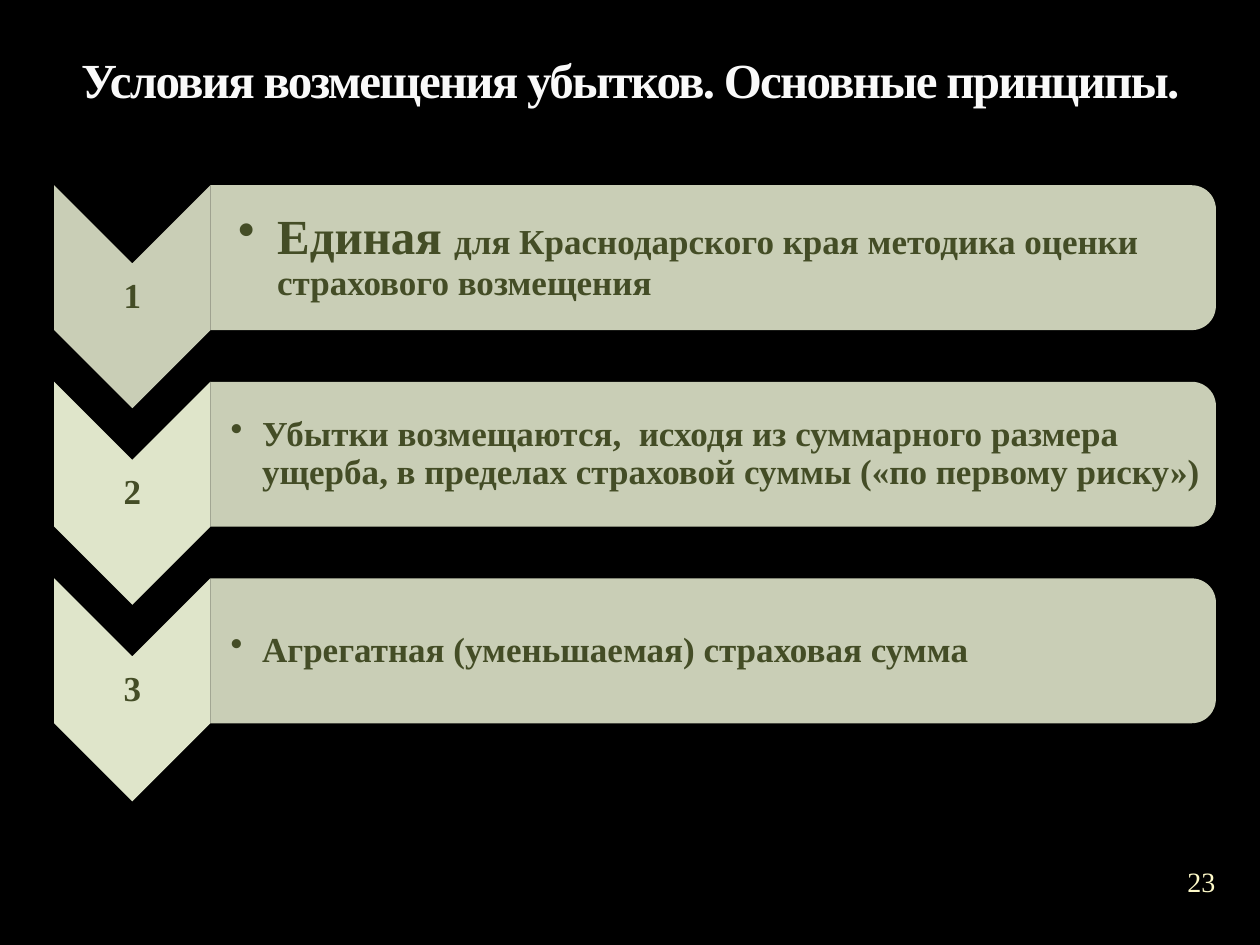
"""Build the slide listing the principles of loss compensation."""
from dataclasses import dataclass
from typing import Optional

from lxml.etree import SubElement
from pptx import Presentation
from pptx.dml.color import RGBColor
from pptx.enum.shapes import MSO_SHAPE as Shape
from pptx.enum.text import MSO_ANCHOR as Anchor, MSO_AUTO_SIZE as AutoSize, PP_ALIGN as Align
from pptx.oxml.ns import qn
from pptx.util import Inches, Pt

WIDTH, HEIGHT = 10, 7.5
FONT = "Times New Roman"
PALE, DARK = "DFE5CA", "444D26"
ROW_TOP, ROW_PITCH = 1.47, 1.56
CHEVRON_LEFT, CHEVRON_WIDTH, CHEVRON_HEIGHT = 0.43, 1.24, 1.77
PANEL_LEFT = CHEVRON_LEFT + CHEVRON_WIDTH
PANEL_WIDTH, PANEL_HEIGHT = 7.98, 1.15
TEXT_WIDTH, TEXT_HEIGHT, NUMBER_HEIGHT = 7.92, 1.04, 0.53


@dataclass(frozen=True)
class Box:
    left: float
    top: float
    width: float
    height: float


@dataclass(frozen=True)
class Phrase:
    text: str
    size: float = 20
    color: str = DARK
    bold: bool = True


@dataclass(frozen=True)
class Principle:
    phrases: tuple[Phrase, ...]
    inset: float = 0.16
    indent: float = 0.25
    chevron_opacity: Optional[int] = None


PRINCIPLES = (
    Principle(
        (Phrase("Единая ", 28),
         Phrase("для Краснодарского края методика оценки страхового возмещения")),
        inset=0.22, indent=0.31, chevron_opacity=90),
    Principle((Phrase("Убытки возмещаются,  исходя из суммарного размера ущерба, "
                      "в пределах страховой суммы («по первому риску»)"),)),
    Principle((Phrase("Агрегатная (уменьшаемая) страховая сумма"),)),
)


def rgb(color: str) -> RGBColor:
    """Turn a hex string into a colour."""
    return RGBColor.from_string(color)


def format_run(run, phrase: Phrase) -> None:
    """Apply the look of a phrase to a run."""
    font = run.font
    font.name, font.size, font.bold = FONT, Pt(phrase.size), phrase.bold
    font.color.rgb = rgb(phrase.color)


def add_text(slide, box: Box, phrases: tuple[Phrase, ...], inset: float = 0.01,
             left_inset: Optional[float] = None, align=Align.CENTER):
    """Add a vertically centred text box and return its paragraph."""
    shape = slide.shapes.add_textbox(*map(Inches, (box.left, box.top, box.width, box.height)))
    frame = shape.text_frame
    frame.word_wrap, frame.vertical_anchor = True, Anchor.MIDDLE
    frame.margin_top = frame.margin_right = frame.margin_bottom = Inches(inset)
    frame.margin_left = Inches(inset if left_inset is None else left_inset)
    paragraph = frame.paragraphs[0]
    paragraph.alignment, paragraph.line_spacing = align, 0.9
    for phrase in phrases:
        run = paragraph.add_run()
        run.text = phrase.text
        format_run(run, phrase)
    return paragraph


def add_bullet(paragraph, indent: float) -> None:
    """Give a paragraph a hanging bullet."""
    properties = paragraph._p.get_or_add_pPr()
    properties.set("marL", str(Inches(indent)))
    properties.set("indent", str(-Inches(indent)))
    SubElement(properties, qn("a:buChar"), char="•")


def add_turned_shape(slide, kind, box: Box, opacity: Optional[int] = None) -> None:
    """Add a shape turned a quarter clockwise so that it covers the box."""
    left = box.left + (box.width - box.height) / 2
    top = box.top + (box.height - box.width) / 2
    shape = slide.shapes.add_shape(kind, *map(Inches, (left, top, box.height, box.width)))
    shape.rotation = 90
    shape.shadow.inherit = False
    shape.line.fill.background()
    shape.fill.solid()
    shape.fill.fore_color.rgb = rgb(PALE)
    if opacity is not None:
        color = shape._element.spPr.find(qn("a:solidFill")).find(qn("a:srgbClr"))
        SubElement(color, qn("a:alpha"), val=str(opacity * 1000))


def add_principle(slide, row: int, principle: Principle) -> None:
    """Draw the numbered chevron and the panel of one row."""
    top = ROW_TOP + row * ROW_PITCH
    add_turned_shape(slide, Shape.CHEVRON,
                     Box(CHEVRON_LEFT, top, CHEVRON_WIDTH, CHEVRON_HEIGHT),
                     principle.chevron_opacity)
    number_top = top + (CHEVRON_HEIGHT - NUMBER_HEIGHT) / 2
    add_text(slide, Box(CHEVRON_LEFT, number_top, CHEVRON_WIDTH, NUMBER_HEIGHT),
             (Phrase(str(row + 1)),))
    add_turned_shape(slide, Shape.ROUND_2_SAME_RECTANGLE,
                     Box(PANEL_LEFT, top, PANEL_WIDTH, PANEL_HEIGHT), 90)
    text_top = top + (PANEL_HEIGHT - TEXT_HEIGHT) / 2
    paragraph = add_text(slide, Box(PANEL_LEFT, text_top, TEXT_WIDTH, TEXT_HEIGHT),
                         principle.phrases, left_inset=principle.inset, align=Align.LEFT)
    add_bullet(paragraph, principle.indent)


def set_title(slide, text: str) -> None:
    """Place and format the title placeholder."""
    title = slide.shapes.title
    title.left, title.top = Inches(0.05 * WIDTH), Inches(0.36)
    title.width, title.height = Inches(0.9 * WIDTH), Inches(0.55)
    frame = title.text_frame
    frame.text = text
    frame.auto_size, frame.word_wrap = AutoSize.NONE, True
    frame.vertical_anchor = Anchor.BOTTOM
    paragraph = frame.paragraphs[0]
    paragraph.alignment = Align.CENTER
    run = paragraph.runs[0]
    format_run(run, Phrase(text, 28, "F9F9F9"))
    run._r.get_or_add_rPr().set("spc", "-100")


def main() -> None:
    """Build and save the presentation."""
    presentation = Presentation()
    presentation.slide_width, presentation.slide_height = Inches(WIDTH), Inches(HEIGHT)
    slide = presentation.slides.add_slide(presentation.slide_layouts[5])
    slide.background.fill.solid()
    slide.background.fill.fore_color.rgb = rgb("000000")
    set_title(slide, "Условия возмещения убытков. Основные принципы.")
    for row, principle in enumerate(PRINCIPLES):
        add_principle(slide, row, principle)
    add_text(slide, Box(0.92 * WIDTH, 6.76, 0.67, 0.5),
             (Phrase("23", 16, "FEFAC9", False),), inset=0)
    presentation.save("out.pptx")


if __name__ == "__main__":
    main()
